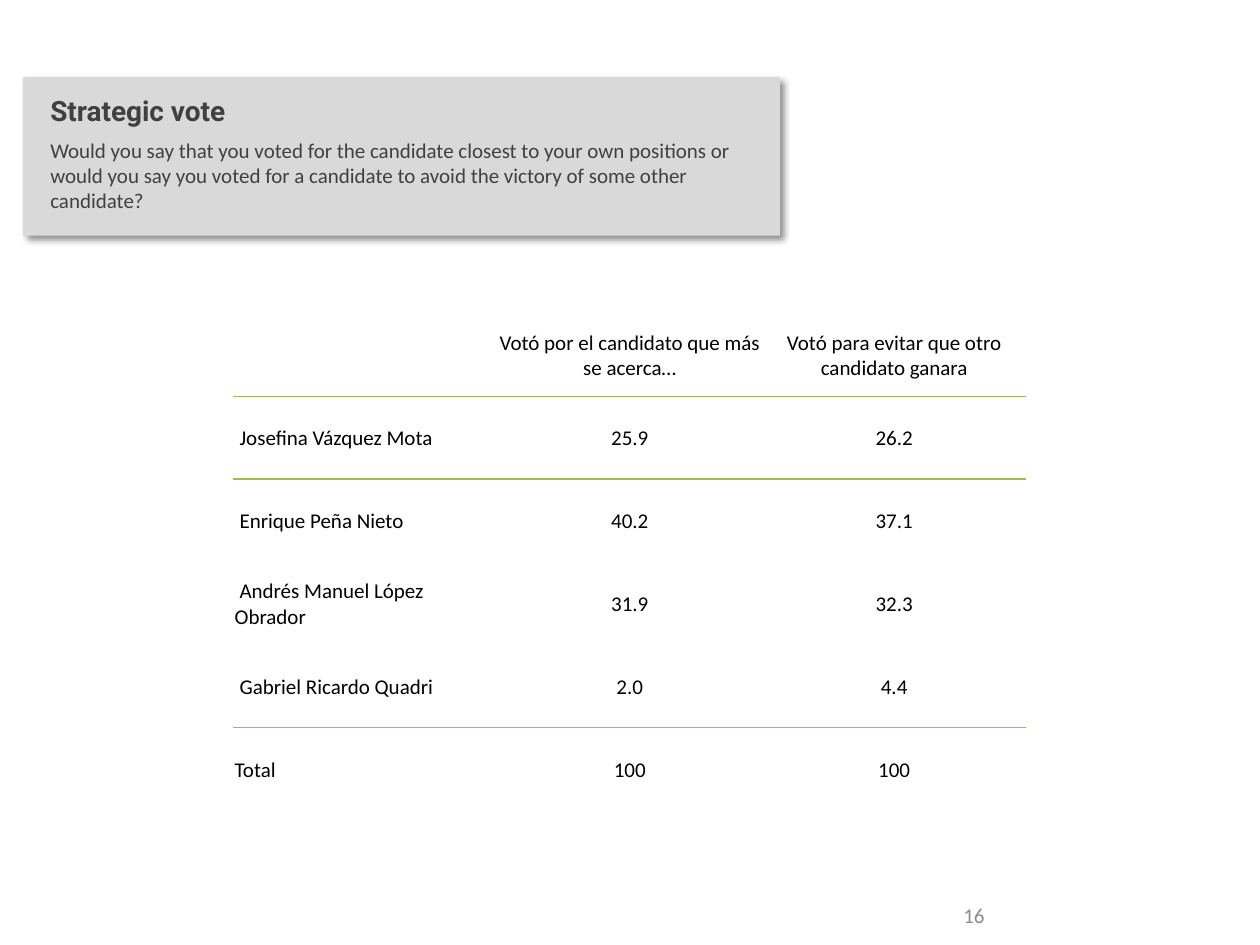
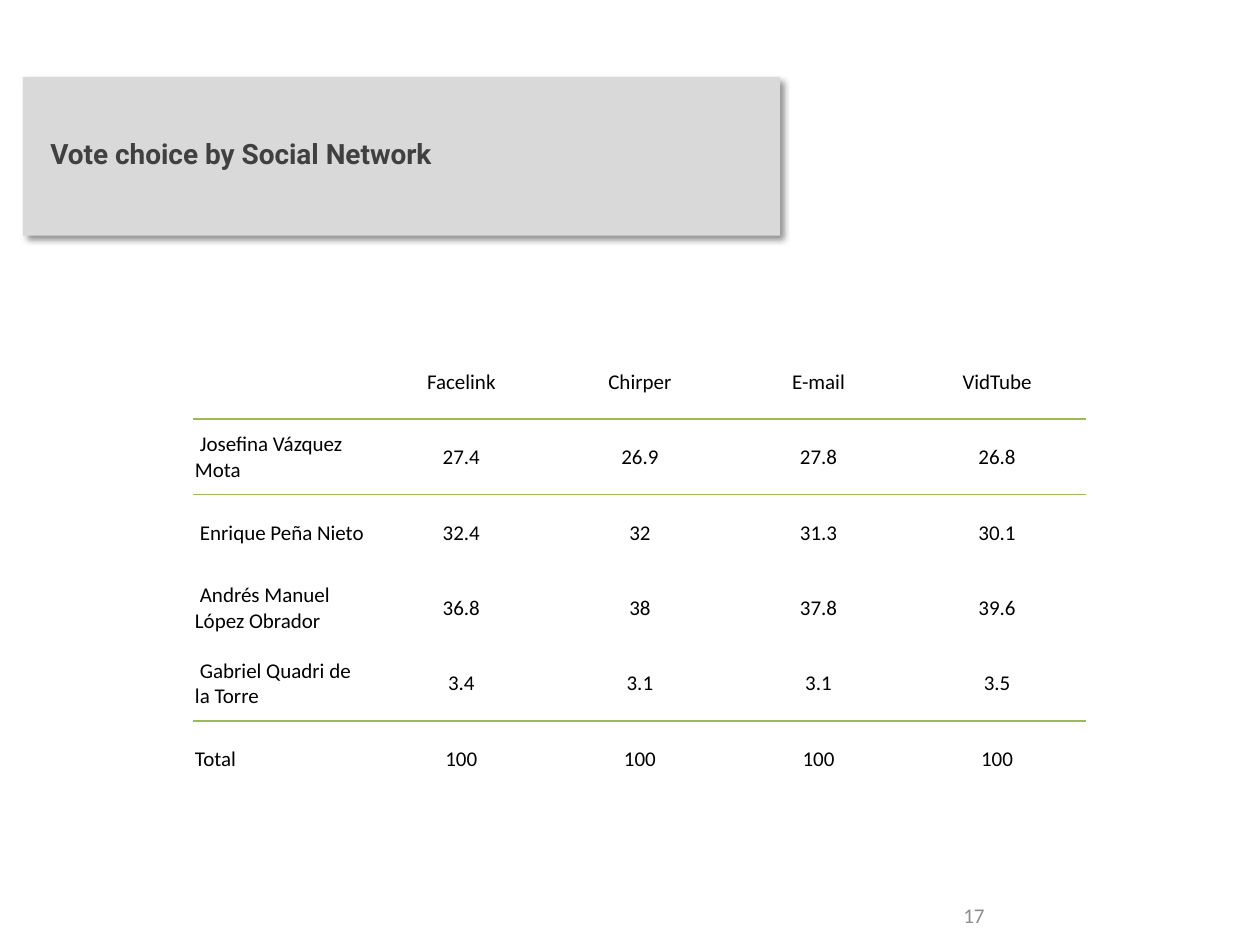
"""Build two slides of survey tables under a shared grey heading band."""
import pptx
import pptx.dml.color
import pptx.enum.shapes
import pptx.enum.text
import pptx.oxml
import pptx.oxml.ns
import pptx.util
from pptx.util import Cm, Pt

COLOURS = {"band": "D9D9D9", "heading": "404040", "number": "8C8C8C",
           "cell": "000000", "rule": "9BBB59"}
FORMATS = {
    "heading": {"name": "Roboto", "size": Pt(16), "bold": True},
    "question": {"name": "Calibri", "size": Pt(12), "bold": False},
    "number": {"name": "Calibri", "size": Pt(12), "bold": False},
    "cell": {"name": "Calibri", "size": Pt(12), "bold": False},
}
NAMESPACE = pptx.oxml.ns.nsdecls("a")
LEFT, CENTER = pptx.enum.text.PP_ALIGN.LEFT, pptx.enum.text.PP_ALIGN.CENTER
MIDDLE = pptx.enum.text.MSO_ANCHOR.MIDDLE
PLAIN_TABLE = "{2D5ABB26-0587-4C30-8999-92F81FD0307C}"
RULED_ROWS = (0, 4)

SURVEYS = [
    {
        "number": "16",
        "heading": "Strategic vote",
        "question": "Would you say that you voted for the candidate closest to your own "
                    "positions or would you say you voted for a candidate to avoid the "
                    "victory of some other candidate?",
        "left": 4.7, "top": 6.32, "column": 5.33, "row": 1.67,
        "results": [
            ["", "Votó por el candidato que más se acerca…",
             "Votó para evitar que otro candidato ganara"],
            ["Josefina Vázquez Mota", "25.9", "26.2"],
            ["Enrique Peña Nieto", "40.2", "37.1"],
            ["Andrés Manuel López Obrador", "31.9", "32.3"],
            ["Gabriel Ricardo Quadri", "2.0", "4.4"],
            ["Total", "100", "100"],
        ],
    },
    {
        "number": "17",
        "heading": "Vote choice by Social Network",
        "question": "",
        "left": 3.9, "top": 6.93, "column": 3.6, "row": 1.52,
        "results": [
            ["", "Facelink", "Chirper", "E-mail", "VidTube"],
            ["Josefina Vázquez Mota", "27.4", "26.9", "27.8", "26.8"],
            ["Enrique Peña Nieto", "32.4", "32", "31.3", "30.1"],
            ["Andrés Manuel López Obrador", "36.8", "38", "37.8", "39.6"],
            ["Gabriel Quadri de la Torre", "3.4", "3.1", "3.1", "3.5"],
            ["Total", "100", "100", "100", "100"],
        ],
    },
]


def colour(part):
    return pptx.dml.color.RGBColor.from_string(COLOURS[part])


def write(paragraph, text, part, alignment):
    paragraph.alignment = alignment
    run = paragraph.add_run()
    run.text = text
    for attribute, value in FORMATS[part].items():
        setattr(run.font, attribute, value)
    run.font.color.rgb = colour("heading" if part == "question" else part)


deck = pptx.Presentation()
deck.slide_width, deck.slide_height = Cm(25.4), Cm(19.05)
layout = deck.slide_layouts[5]
slides = [deck.slides.add_slide(layout) for survey in SURVEYS]

band = slides[0].shapes.add_shape(pptx.enum.shapes.MSO_SHAPE.RECTANGLE,
                                  Cm(0.46), Cm(1.55), Cm(15.27), Cm(3.2))
band.fill.solid()
band.fill.fore_color.rgb = colour("band")
band.line.fill.background()
band.shadow.inherit = False
band.element.spPr.find(pptx.oxml.ns.qn("a:effectLst")).append(pptx.oxml.parse_xml(
    f'<a:outerShdw {NAMESPACE} blurRad="{Pt(4)}" dist="{Pt(3)}" dir="2700000" algn="tl" '
    'rotWithShape="0"><a:srgbClr val="000000"><a:alpha val="43000"/></a:srgbClr>'
    '</a:outerShdw>'))
band.element.nvSpPr.cNvPr.set("id", "20")
layout.element.cSld.spTree.insert(2, band.element)

for slide, survey in zip(slides, SURVEYS):
    heading = slide.shapes.title
    heading.left, heading.top, heading.width, heading.height = (
        Cm(0.76), Cm(1.74), Cm(14.55), Cm(2.69))
    heading.text_frame.auto_size = pptx.enum.text.MSO_AUTO_SIZE.NONE
    heading.text_frame.vertical_anchor = MIDDLE
    write(heading.text_frame.paragraphs[0], survey["heading"], "heading", LEFT)
    if survey["question"]:
        write(heading.text_frame.add_paragraph(), survey["question"], "question", LEFT)
    for paragraph in heading.text_frame.paragraphs:
        paragraph.space_after = Pt(6)

    number = slide.shapes.add_textbox(Cm(18.67), Cm(17.93), Cm(1.93), Cm(1.02)).text_frame
    number.word_wrap = True
    number.vertical_anchor = MIDDLE
    write(number.paragraphs[0], survey["number"], "number", CENTER)

    results = survey["results"]
    rows, columns = len(results), len(results[0])
    frame = slide.shapes.add_table(
        rows, columns, Cm(survey["left"]), Cm(survey["top"]),
        Cm(survey["column"] * columns), Cm(survey["row"] * rows))
    votes = frame.table
    votes.first_row = votes.horz_banding = False
    frame.element.find(".//" + pptx.oxml.ns.qn("a:tableStyleId")).text = PLAIN_TABLE

    for r, values in enumerate(results):
        for c, value in enumerate(values):
            cell = votes.cell(r, c)
            cell.fill.background()
            cell.vertical_anchor = MIDDLE
            cell.margin_left = cell.margin_right = cell.margin_top = Cm(0.03)
            cell.margin_bottom = 0
            if value:
                paragraph = cell.text_frame.paragraphs[0]
                write(paragraph, value, "cell", CENTER if c else LEFT)
                if c == 0 and value != "Total":
                    paragraph._p.get_or_add_pPr().set("indent", str(Cm(0.1)))
            for edge, ruled in (("lnB", r in RULED_ROWS), ("lnT", r - 1 in RULED_ROWS)):
                if ruled:
                    cell._tc.get_or_add_tcPr().insert(0, pptx.oxml.parse_xml(
                        f'<a:{edge} {NAMESPACE} w="{Pt(1)}"><a:solidFill>'
                        f'<a:srgbClr val="{COLOURS["rule"]}"/></a:solidFill></a:{edge}>'))

deck.save("out.pptx")
